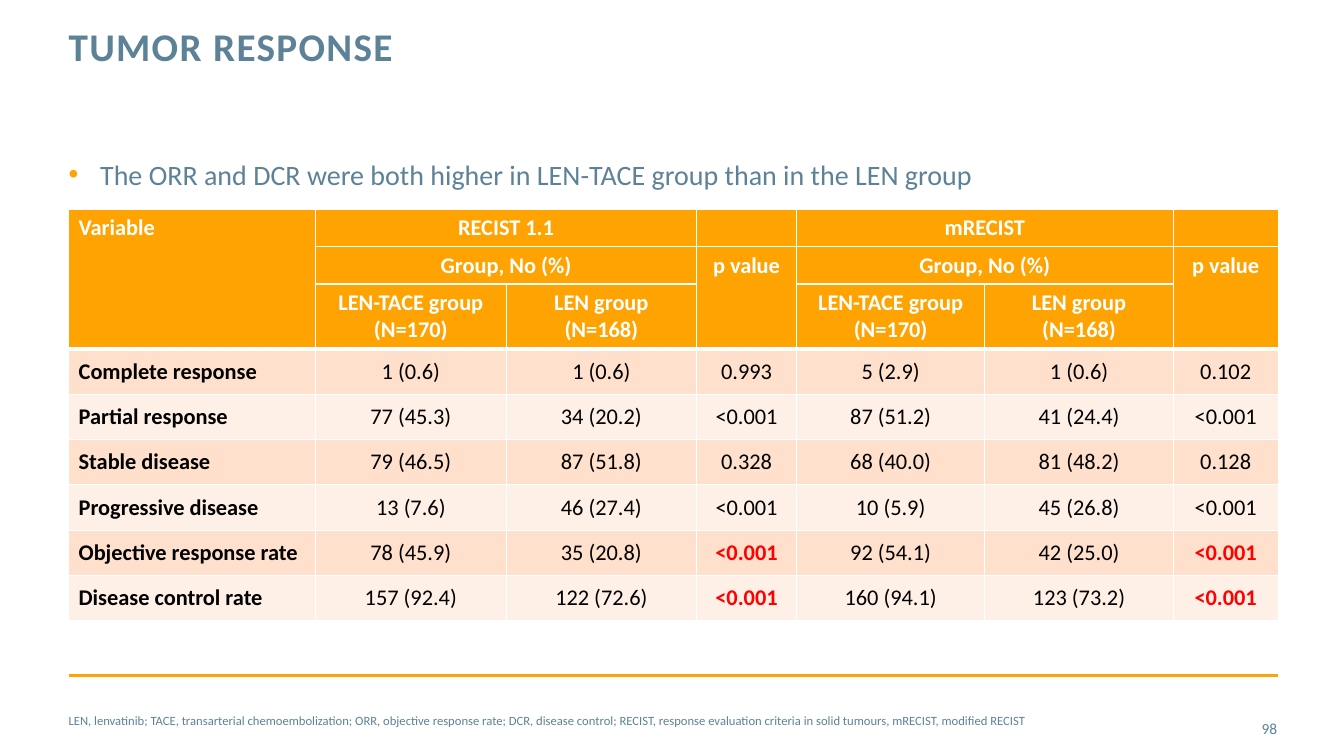
from dataclasses import dataclass, field

from lxml.etree import SubElement
from pptx import Presentation
from pptx.dml.color import RGBColor
from pptx.enum.shapes import MSO_CONNECTOR
from pptx.enum.text import MSO_ANCHOR, PP_ALIGN
from pptx.oxml.ns import qn
from pptx.util import Pt

FONT = "Calibri"
SLATE, ORANGE, WHITE, BLACK, RED = "5D8298", "FEA302", "FFFFFF", "000000", "FF0000"
BANDS = ("FFE0CC", "FFF0E7")
LEFT, WIDTH = 49, 863.3
COL_WIDTHS = (176.4, 136.1, 136.1, 71.3, 134.6, 134.6, 74.9)
HEADER_HEIGHTS = (26.7, 26.7, 46.3)
BODY_HEIGHT = 32.4
GROUPS = ("LEN-TACE group\n(N=170)", "LEN group\n(N=168)")
HEADER = (
    ("Variable", "RECIST 1.1", "", "", "mRECIST", "", ""),
    ("", "Group, No (%)", "", "p value", "Group, No (%)", "", "p value"),
    ("", *GROUPS, "", *GROUPS, ""),
)
MERGES = (
    ((0, 0), (2, 0)),
    ((0, 1), (0, 2)),
    ((0, 4), (0, 5)),
    ((1, 1), (1, 2)),
    ((1, 4), (1, 5)),
    ((1, 3), (2, 3)),
    ((1, 6), (2, 6)),
)
RESPONSES = (
    ("Complete response", "1 (0.6)", "1 (0.6)", "0.993", "5 (2.9)", "1 (0.6)", "0.102"),
    ("Partial response", "77 (45.3)", "34 (20.2)", "<0.001", "87 (51.2)", "41 (24.4)", "<0.001"),
    ("Stable disease", "79 (46.5)", "87 (51.8)", "0.328", "68 (40.0)", "81 (48.2)", "0.128"),
    ("Progressive disease", "13 (7.6)", "46 (27.4)", "<0.001", "10 (5.9)", "45 (26.8)", "<0.001"),
    ("Objective response rate", "78 (45.9)", "35 (20.8)", "<0.001", "92 (54.1)", "42 (25.0)", "<0.001"),
    ("Disease control rate", "157 (92.4)", "122 (72.6)", "<0.001", "160 (94.1)", "123 (73.2)", "<0.001"),
)
P_COLS = (3, 6)
RATE_ROWS = (4, 5)


@dataclass
class Label:
    text: str
    left: float
    top: float
    width: float
    height: float
    size: float
    bold: bool = False
    anchor: MSO_ANCHOR = MSO_ANCHOR.TOP
    para: dict = field(default_factory=dict)
    tracking: int = 0
    bullet: bool = False


LABELS = (
    Label("TUMOR RESPONSE", LEFT, 19.4, 688.3, 63.4, 28, bold=True,
          para={"line_spacing": Pt(30)}, tracking=100),
    Label("The ORR and DCR were both higher in LEN-TACE group than in the LEN group",
          LEFT, 112.3, WIDTH, 30.2, 20, bullet=True),
    Label("LEN, lenvatinib; TACE, transarterial chemoembolization; ORR, objective response rate; "
          "DCR, disease control; RECIST, response evaluation criteria in solid tumours, "
          "mRECIST, modified RECIST",
          LEFT, 500.4, 782.6, 28.8, 9, anchor=MSO_ANCHOR.MIDDLE),
    Label("98", 850.3, 506.2, 62, 28.8, 11, anchor=MSO_ANCHOR.MIDDLE,
          para={"alignment": PP_ALIGN.RIGHT}),
)


def rgb(value: str) -> RGBColor:
    return RGBColor.from_string(value)


def assign(obj, values: dict) -> None:
    for name, value in values.items():
        setattr(obj, name, value)


def set_indent(p, points: float) -> None:
    pPr = p._p.get_or_add_pPr()
    pPr.set("marL", str(Pt(points)))
    pPr.set("indent", str(-Pt(points)))


def add_bullet(p) -> None:
    set_indent(p, 22.5)
    pPr = p._p.get_or_add_pPr()
    SubElement(SubElement(pPr, qn("a:buClr")), qn("a:srgbClr"), val=ORANGE)
    SubElement(pPr, qn("a:buFont"), typeface="Arial")
    SubElement(pPr, qn("a:buChar"), char="•")


def write(p, text: str, size: float, color: str, bold: bool, tracking: int = 0) -> None:
    if not text:
        SubElement(p._p, qn("a:endParaRPr"), sz=str(size * 100))
        return
    for i, line in enumerate(text.split("\n")):
        if i:
            p.add_line_break()
        r = p.add_run()
        r.text = line
        assign(r.font, {"name": FONT, "size": Pt(size), "bold": bold})
        r.font.color.rgb = rgb(color)
        if tracking:
            r.font._element.set("spc", str(tracking))


def add_label(slide, label: Label) -> None:
    box = (label.left, label.top, label.width, label.height)
    tf = slide.shapes.add_textbox(*map(Pt, box)).text_frame
    assign(tf, {"word_wrap": True, "vertical_anchor": label.anchor, "margin_left": 0,
                "margin_top": 0, "margin_right": 0, "margin_bottom": 0})
    p = tf.paragraphs[0]
    assign(p, label.para)
    if label.bullet:
        add_bullet(p)
    write(p, label.text, label.size, SLATE, label.bold, label.tracking)


def add_borders(cell, top: float, bottom: float) -> None:
    tcPr = cell._tc.get_or_add_tcPr()
    for side, weight in (("L", 1), ("R", 1), ("T", top), ("B", bottom)):
        ln = SubElement(tcPr, qn(f"a:ln{side}"), w=str(Pt(weight)))
        SubElement(SubElement(ln, qn("a:solidFill")), qn("a:srgbClr"), val=WHITE)


def fill_cell(cell, row: int, col: int, text: str) -> None:
    body_row = row - len(HEADER)
    in_body = body_row >= 0
    heavy_bottom = row == len(HEADER) - 1 or (row, col) in ((0, 0), (1, 3), (1, 6))
    add_borders(cell, 3 if body_row == 0 else 1, 3 if heavy_bottom else 1)
    cell.fill.solid()
    cell.fill.fore_color.rgb = rgb(BANDS[body_row % 2] if in_body else ORANGE)
    margin = Pt(6.48 if in_body else 3.6)
    assign(cell, {"margin_left": Pt(7.2), "margin_right": Pt(7.2),
                  "margin_top": margin, "margin_bottom": margin,
                  "vertical_anchor": MSO_ANCHOR.MIDDLE if in_body else MSO_ANCHOR.TOP})
    p = cell.text_frame.paragraphs[0]
    p.alignment = PP_ALIGN.CENTER if col else PP_ALIGN.LEFT
    if in_body and col == 0:
        set_indent(p, 14.4)
    key = body_row in RATE_ROWS and col in P_COLS
    color = RED if key else BLACK if in_body else WHITE
    write(p, text, 16, color, key or not in_body or col == 0)


def add_response_table(slide) -> None:
    rows = HEADER + RESPONSES
    heights = HEADER_HEIGHTS + (BODY_HEIGHT,) * len(RESPONSES)
    frame = slide.shapes.add_table(len(rows), len(COL_WIDTHS), Pt(LEFT), Pt(149.5),
                                   Pt(WIDTH), Pt(sum(heights)))
    table = frame.table
    table.horz_banding = False
    for column, width in zip(table.columns, COL_WIDTHS):
        column.width = Pt(width)
    for table_row, height in zip(table.rows, heights):
        table_row.height = Pt(height)
    for start, end in MERGES:
        table.cell(*start).merge(table.cell(*end))
    for i, texts in enumerate(rows):
        for j, text in enumerate(texts):
            fill_cell(table.cell(i, j), i, j, text)


def add_rule(slide) -> None:
    line = slide.shapes.add_connector(MSO_CONNECTOR.STRAIGHT, Pt(LEFT), Pt(482.4),
                                      Pt(913), Pt(482.4))
    line.line.color.rgb = rgb("FFA402")
    line.line.width = Pt(2)
    SubElement(line._element.spPr, qn("a:effectLst"))


def main() -> None:
    prs = Presentation()
    assign(prs, {"slide_width": Pt(960), "slide_height": Pt(540)})
    slide = prs.slides.add_slide(prs.slide_layouts[6])
    add_rule(slide)
    for label in LABELS:
        add_label(slide, label)
    add_response_table(slide)
    prs.save("out.pptx")


if __name__ == "__main__":
    main()
